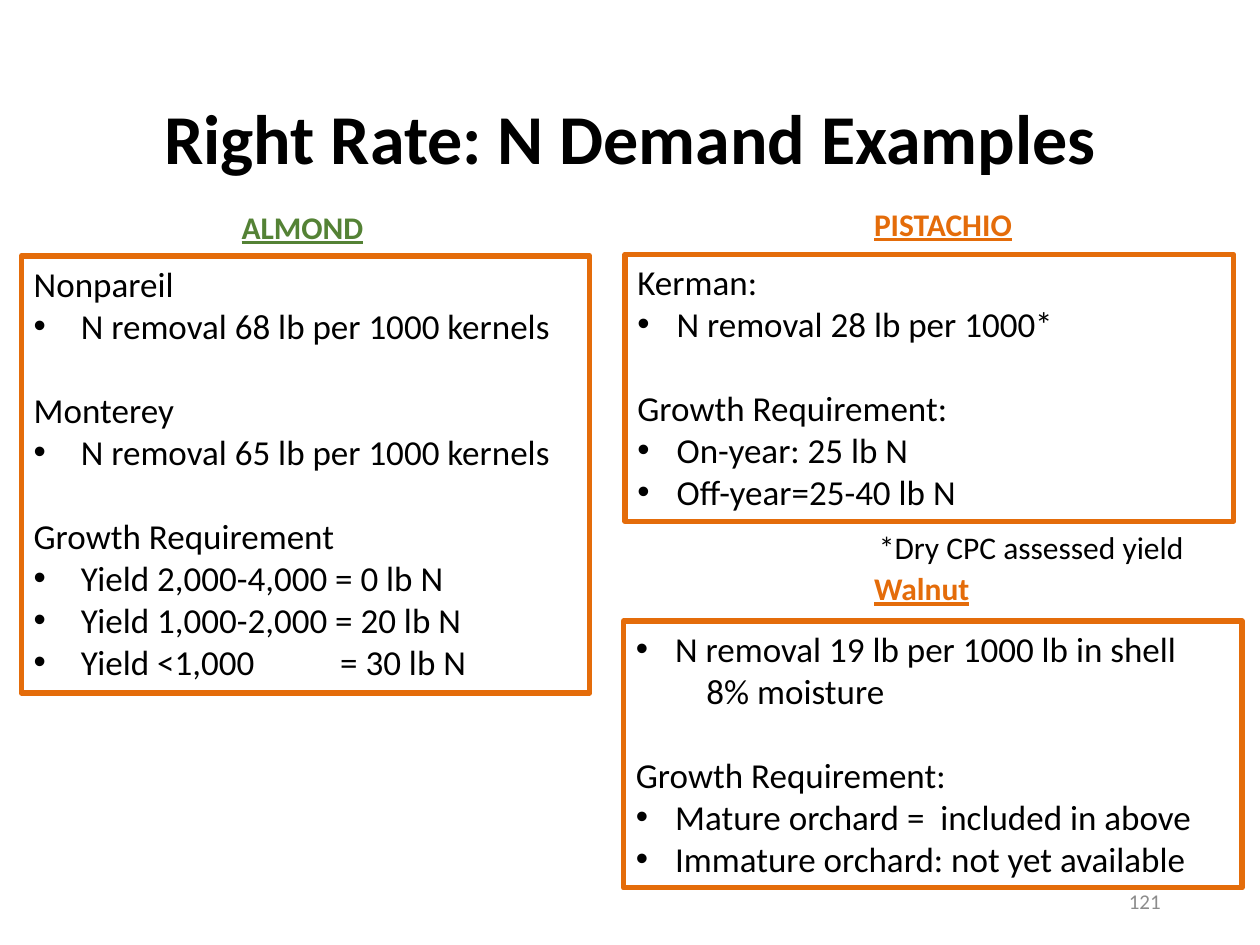
"""Build the slide comparing nitrogen demand of almond, pistachio and walnut."""
from lxml import etree
from pptx import Presentation
from pptx.dml.color import RGBColor
from pptx.enum.shapes import MSO_SHAPE
from pptx.enum.text import MSO_ANCHOR, PP_ALIGN
from pptx.oxml.ns import qn
from pptx.util import Cm, Pt

BLACK = RGBColor(0x00, 0x00, 0x00)
GREEN = RGBColor(0x54, 0x82, 0x35)
ORANGE = RGBColor(0xE4, 0x6C, 0x0A)
GREY = RGBColor(0x8C, 0x8C, 0x8C)
FONT = "Calibri"


def style(paragraph, size, color, bold=False, underline=False):
    for run in paragraph.runs:
        run.font.name = FONT
        run.font.size = Pt(size)
        run.font.color.rgb = color
        run.font.bold = bold
        run.font.underline = underline


def indent(paragraph, left, first, bullet=False, tab=None):
    properties = paragraph._p.get_or_add_pPr()
    properties.set("marL", str(Cm(left)))
    properties.set("indent", str(Cm(first)))
    if bullet:
        etree.SubElement(properties, qn("a:buFont"), typeface="Arial")
        etree.SubElement(properties, qn("a:buChar"), char="•")
    if tab:
        tabs = etree.SubElement(properties, qn("a:tabLst"))
        etree.SubElement(tabs, qn("a:tab"), pos=str(Cm(tab)), algn="l")


presentation = Presentation()
presentation.slide_width = Cm(25.4)
presentation.slide_height = Cm(19.05)
slide = presentation.slides.add_slide(presentation.slide_layouts[5])

title = slide.shapes.title
title.left, title.top, title.width, title.height = Cm(1.75), Cm(1.02), Cm(21.9), Cm(3.68)
title.text_frame.text = "Right Rate: N Demand Examples"
title.text_frame.vertical_anchor = MSO_ANCHOR.MIDDLE
title_line = title.text_frame.paragraphs[0]
title_line.alignment = PP_ALIGN.CENTER
title_line.line_spacing = 0.9
style(title_line, 40, BLACK, bold=True)

crops = [
    ((0.43, 5.16, 11.46, 8.81), 0.95, [
        ("heading", "Nonpareil"),
        ("bullet", "N removal 68 lb per 1000 kernels"),
        ("heading", "Monterey"),
        ("bullet", "N removal 65 lb per 1000 kernels"),
        ("heading", "Growth Requirement"),
        ("bullet", "Yield 2,000-4,000 = 0 lb N"),
        ("bullet", "Yield 1,000-2,000 = 20 lb N"),
        ("bullet", "Yield <1,000\t= 30 lb N"),
    ]),
    ((12.6, 5.13, 12.27, 5.38), 0.79, [
        ("heading", "Kerman:"),
        ("bullet", "N removal 28 lb per 1000*"),
        ("heading", "Growth Requirement:"),
        ("bullet", "On-year: 25 lb N"),
        ("bullet", "Off-year=25-40 lb N"),
    ]),
    ((12.57, 12.52, 12.47, 5.38), 0.79, [
        ("bullet", "N removal 19 lb per 1000 lb in shell"),
        ("continued", "8% moisture"),
        ("heading", "Growth Requirement:"),
        ("bullet", "Mature orchard =  included in above"),
        ("bullet", "Immature orchard: not yet available"),
    ]),
]
for place, hang, lines in crops:
    panel = slide.shapes.add_shape(MSO_SHAPE.RECTANGLE, *map(Cm, place))
    panel.shadow.inherit = False
    panel.fill.background()
    panel.line.color.rgb = ORANGE
    panel.line.width = Pt(3)
    demand = panel.text_frame
    demand.word_wrap = True
    demand.vertical_anchor = MSO_ANCHOR.TOP
    demand.text = "\n".join(text for _, text in lines)
    for position, (role, text) in enumerate(lines):
        line = demand.paragraphs[position]
        line.alignment = PP_ALIGN.LEFT
        if role == "heading" and position:
            line.space_before = Pt(24)
        if role == "bullet":
            indent(line, hang, -hang, bullet=True, tab=6.18 if "\t" in text else None)
        if role == "continued":
            indent(line, 1.42, 0)
        style(line, 20, BLACK)

labels = [
    ("ALMOND", (4.62, 4.06, 3, 1.02), PP_ALIGN.LEFT, 18, GREEN, True),
    ("PISTACHIO", (17.37, 4.01, 3.38, 1.02), PP_ALIGN.LEFT, 18, ORANGE, True),
    ("Walnut", (17.37, 11.35, 2.46, 1.02), PP_ALIGN.LEFT, 18, ORANGE, True),
    ("*Dry CPC assessed yield", (16.66, 10.39, 8.26, 1.27), PP_ALIGN.CENTER, 18, BLACK, False),
    ("121", (17.93, 17.65, 5.72, 1.02), PP_ALIGN.RIGHT, 12, GREY, False),
]
for text, place, alignment, size, color, is_crop in labels:
    label = slide.shapes.add_textbox(*map(Cm, place)).text_frame
    label.word_wrap = not is_crop
    label.vertical_anchor = MSO_ANCHOR.TOP if is_crop else MSO_ANCHOR.MIDDLE
    label.text = text
    label.paragraphs[0].alignment = alignment
    style(label.paragraphs[0], size, color, bold=is_crop, underline=is_crop)

presentation.save("out.pptx")
